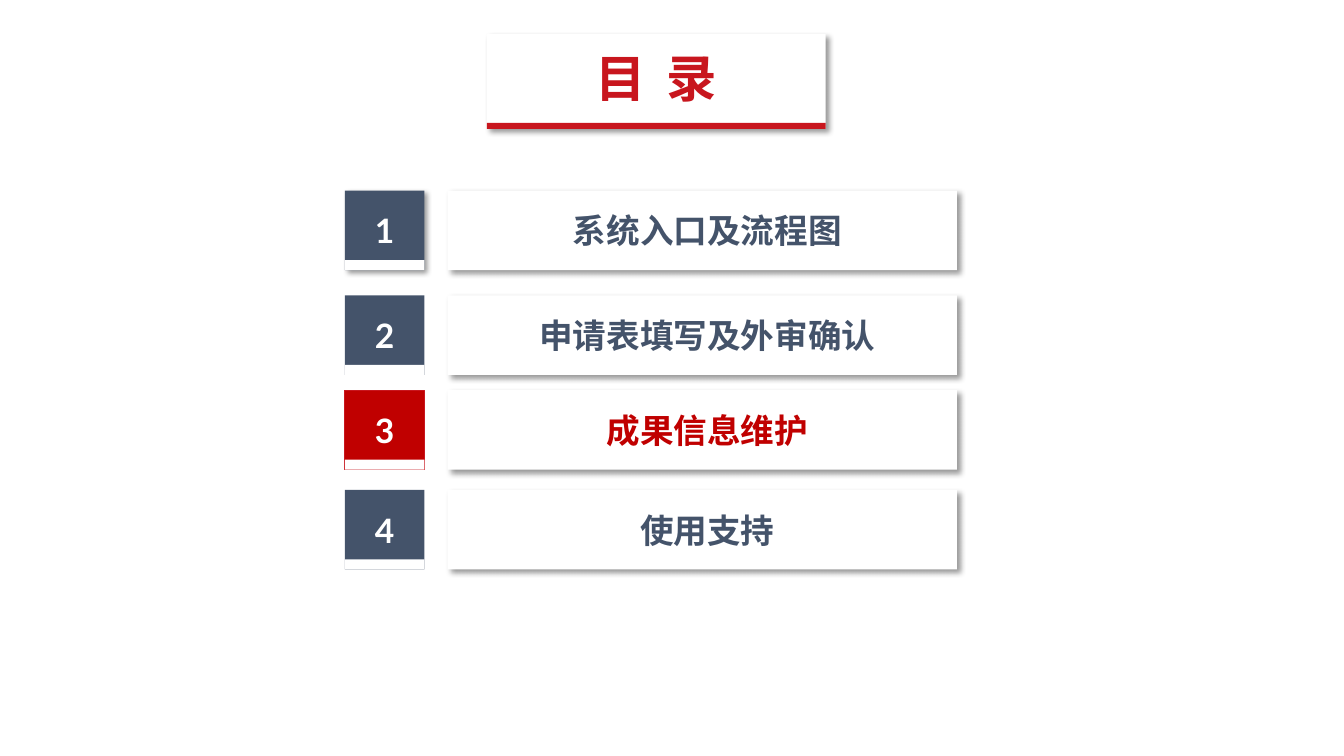
from lxml.etree import SubElement
from pptx import Presentation
from pptx.dml.color import RGBColor
from pptx.enum.shapes import MSO_SHAPE
from pptx.enum.text import MSO_ANCHOR, MSO_AUTO_SIZE, PP_ALIGN
from pptx.oxml.ns import qn
from pptx.util import Inches, Pt

COLORS = {
    "white": "FFFFFF",
    "slate": "44536A",
    "active": "C00000",
    "accent": "C8161E",
    "shadow": "000000",
}
FONT = "Lato"

# Agenda grid, in inches
BADGE_LEFT, LABEL_LEFT = 3.42, 4.44
BADGE_SIZE, LABEL_WIDTH, STRIP_HEIGHT = 0.79, 5.05, 0.1
ACTIVE_NUMBER = 3
AGENDA = [
    (1.89, "系统入口及流程图"),
    (2.93, "申请表填写及外审确认"),
    (3.87, "成果信息维护"),
    (4.86, "使用支持"),
]


def color(name):
    return RGBColor.from_string(COLORS[name])


def add_shadow(shape):
    effects = shape.element.spPr.find(qn("a:effectLst"))
    shadow = SubElement(effects, qn("a:outerShdw"), blurRad=str(Pt(4)),
                        dist=str(Pt(3)), dir="2700000", algn="tl", rotWithShape="0")
    tint = SubElement(shadow, qn("a:srgbClr"), val=COLORS["shadow"])
    SubElement(tint, qn("a:alpha"), val="40000")


def add_box(shapes, left, top, width, height, fill, shadow=False):
    box = shapes.add_shape(MSO_SHAPE.RECTANGLE, Inches(left), Inches(top),
                           Inches(width), Inches(height))
    box.fill.solid()
    box.fill.fore_color.rgb = color(fill)
    box.line.fill.background()
    box.shadow.inherit = False
    if shadow:
        add_shadow(box)
    return box


def write(shape, text, size, text_color):
    frame = shape.text_frame
    frame.word_wrap = True
    paragraph = frame.paragraphs[0]
    paragraph.text = text
    paragraph.alignment = PP_ALIGN.CENTER
    paragraph.font.name = FONT
    paragraph.font.size = Pt(size)
    paragraph.font.bold = True
    paragraph.font.color.rgb = color(text_color)
    return paragraph


def add_heading(slide, left, top, width, height):
    bar_height = 0.06
    card = add_box(slide.shapes, left, top, width, height, "white", shadow=True)
    add_box(slide.shapes, left, top + height - bar_height, width, bar_height, "accent")

    # Title stands in front of its card
    title = slide.shapes.title
    card.element.addnext(title.element)
    title.left, title.top = Inches(left), Inches(top + 0.17)
    title.width, title.height = Inches(width), Inches(0.52)
    frame = title.text_frame
    frame.auto_size = MSO_AUTO_SIZE.NONE
    frame.vertical_anchor = MSO_ANCHOR.TOP
    frame.margin_top = Inches(0.03)
    paragraph = write(title, "目 录", 36, "accent")
    paragraph.line_spacing = 0.9
    # Letter spacing widens the gap between the two characters
    paragraph.runs[0].font._element.set("spc", "350")


def add_badge(slide, left, top, number):
    active = number == ACTIVE_NUMBER
    group = slide.shapes.add_group_shape()
    badge = add_box(group.shapes, left, top, BADGE_SIZE, BADGE_SIZE,
                    "active" if active else "slate", shadow=number == 1)
    if active:
        badge.line.color.rgb = color("accent")
        badge.line.width = Pt(0.75)
    badge.text_frame.vertical_anchor = MSO_ANCHOR.MIDDLE
    write(badge, str(number), 24, "white")
    add_box(group.shapes, left, top + BADGE_SIZE - STRIP_HEIGHT,
            BADGE_SIZE, STRIP_HEIGHT, "white")


def add_agenda_row(slide, top, number, text):
    add_badge(slide, BADGE_LEFT, top, number)
    label = add_box(slide.shapes, LABEL_LEFT, top, LABEL_WIDTH, BADGE_SIZE,
                    "white", shadow=True)
    label.text_frame.margin_left = Inches(0.2)
    label.text_frame.vertical_anchor = MSO_ANCHOR.MIDDLE
    write(label, text, 24, "active" if number == ACTIVE_NUMBER else "slate")


def main():
    presentation = Presentation()
    presentation.slide_width = Inches(13.33)
    presentation.slide_height = Inches(7.5)
    slide = presentation.slides.add_slide(presentation.slide_layouts.get_by_name("Title Only"))

    add_heading(slide, 4.83, 0.34, 3.36, 0.94)
    for number, (top, text) in enumerate(AGENDA, start=1):
        add_agenda_row(slide, top, number, text)

    presentation.save("out.pptx")


if __name__ == "__main__":
    main()
